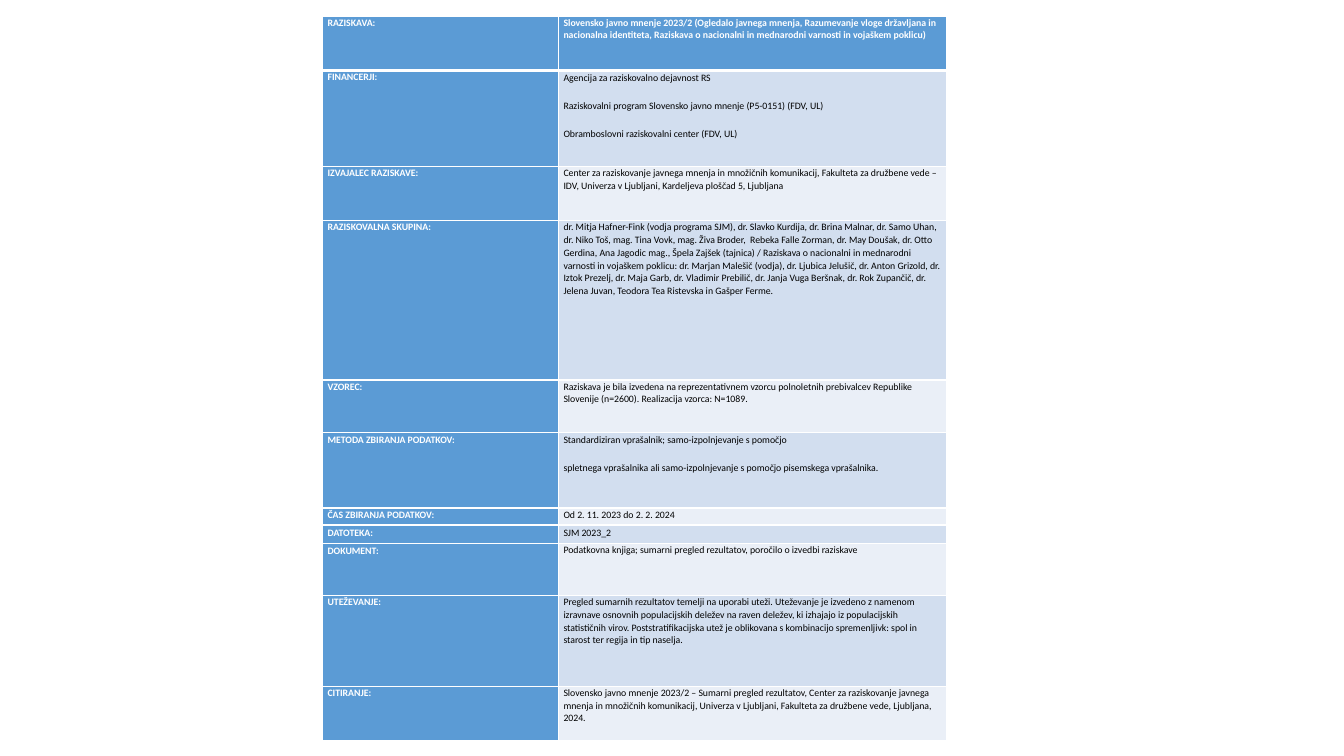
import pptx
import pptx.util
import pptx.dml.color
import pptx.enum.text
import pptx.oxml
import pptx.oxml.ns

WIDE, HIGH = 13.33, 7.5
BLUE, WHITE, BLACK = "5B9BD5", "FFFFFF", "000000"
BANDS = ["EAEFF7", "D2DEEF"]
TIGHT, LOOSE = (1.07, 8), (1.15, 10)
COLS = [2.34, 3.85]

ROWS = [
    (0.54, "RAZISKAVA:", TIGHT, [
        "Slovensko javno mnenje 2023/2 (Ogledalo javnega mnenja, Razumevanje vloge državljana in "
        "nacionalna identiteta, Raziskava o nacionalni in mednarodni varnosti in vojaškem poklicu)"], TIGHT),
    (0.95, "FINANCERJI:", TIGHT, [
        "Agencija za raziskovalno dejavnost RS",
        "Raziskovalni program Slovensko javno mnenje (P5-0151) (FDV, UL)",
        "Obramboslovni raziskovalni center (FDV, UL)"], LOOSE),
    (0.54, "IZVAJALEC RAZISKAVE:", TIGHT, [
        "Center za raziskovanje javnega mnenja in množičnih komunikacij, Fakulteta za družbene vede – "
        "IDV, Univerza v Ljubljani, Kardeljeva ploščad 5, Ljubljana"], TIGHT),
    (1.58, "RAZISKOVALNA SKUPINA:", TIGHT, [
        "dr. Mitja Hafner-Fink (vodja programa SJM), dr. Slavko Kurdija, dr. Brina Malnar, dr. Samo Uhan, "
        "dr. Niko Toš, mag. Tina Vovk, mag. Živa Broder,  Rebeka Falle Zorman, dr. May Doušak, dr. Otto "
        "Gerdina, Ana Jagodic mag., Špela Zajšek (tajnica) / Raziskava o nacionalni in mednarodni "
        "varnosti in vojaškem poklicu: dr. Marjan Malešič (vodja), dr. Ljubica Jelušič, dr. Anton Grizold, "
        "dr. Iztok Prezelj, dr. Maja Garb, dr. Vladimir Prebilič, dr. Janja Vuga Beršnak, "
        "dr. Rok Zupančič, dr. Jelena Juvan, Teodora Tea Ristevska in Gašper Ferme."], TIGHT),
    (0.52, "VZOREC:", TIGHT, [
        "Raziskava je bila izvedena na reprezentativnem vzorcu polnoletnih prebivalcev Republike "
        "Slovenije (n=2600). Realizacija vzorca: N=1089."], TIGHT),
    (0.75, "METODA ZBIRANJA PODATKOV:", LOOSE, [
        "Standardiziran vprašalnik; samo-izpolnjevanje s pomočjo",
        "spletnega vprašalnika ali samo-izpolnjevanje s pomočjo pisemskega vprašalnika."], LOOSE),
    (0.17, "ČAS ZBIRANJA PODATKOV:", TIGHT, ["Od 2. 11. 2023 do 2. 2. 2024"], TIGHT),
    (0.18, "DATOTEKA:", LOOSE, ["SJM 2023_2"], LOOSE),
    (0.52, "DOKUMENT:", LOOSE, [
        "Podatkovna knjiga; sumarni pregled rezultatov, poročilo o izvedbi raziskave"], TIGHT),
    (0.9, "UTEŽEVANJE:", TIGHT, [
        "Pregled sumarnih rezultatov temelji na uporabi uteži. Uteževanje je izvedeno z namenom "
        "izravnave osnovnih populacijskih deležev na raven deležev, ki izhajajo iz populacijskih "
        "statističnih virov. Poststratifikacijska utež je oblikovana s kombinacijo spremenljivk: spol in "
        "starost ter regija in tip naselja."], TIGHT),
    (0.54, "CITIRANJE:", TIGHT, [
        "Slovensko javno mnenje 2023/2 – Sumarni pregled rezultatov, Center za raziskovanje javnega "
        "mnenja in množičnih komunikacij, Univerza v Ljubljani, Fakulteta za družbene vede, Ljubljana, "
        "2024."], TIGHT),
]


def inch(size):
    return pptx.util.Inches(size)


def color(code):
    return pptx.dml.color.RGBColor.from_string(code)


def edge(cell, top, base):
    props = cell._tc.get_or_add_tcPr()
    for spot, (side, width) in enumerate([("L", 1), ("R", 1), ("T", top), ("B", base)]):
        props.insert(spot, pptx.oxml.parse_xml(
            f'<a:ln{side} {pptx.oxml.ns.nsdecls("a")} w="{pptx.util.Pt(width)}">'
            f'<a:solidFill><a:srgbClr val="{WHITE}"/></a:solidFill></a:ln{side}>'))


def write(cell, lines, gaps, bold):
    cell.margin_left = cell.margin_right = inch(0.05)
    cell.margin_top = cell.margin_bottom = 0
    cell.vertical_anchor = pptx.enum.text.MSO_ANCHOR.TOP
    frame = cell.text_frame
    for spot, line in enumerate(lines):
        para = frame.add_paragraph() if spot else frame.paragraphs[0]
        para.line_spacing = gaps[0]
        para.space_after = pptx.util.Pt(gaps[1])
        run = para.add_run()
        run.text = line
        run.font.name = "Calibri"
        run.font.size = pptx.util.Pt(7)
        run.font.bold = bold
        run.font.color.rgb = color(WHITE if bold else BLACK)


def survey(slide, left, top, width, height):
    frame = slide.shapes.add_table(len(ROWS), len(COLS), *map(inch, (left, top, width, height)))
    table = frame.table
    for col, share in zip(table.columns, COLS):
        col.width = inch(width * share / sum(COLS))
    for spot, (tall, label, near, lines, gaps) in enumerate(ROWS):
        table.rows[spot].height = inch(tall)
        pair = [([label], near, True), (lines, gaps, spot == 0)]
        for cell, (words, space, bold) in zip(table.rows[spot].cells, pair):
            write(cell, words, space, bold)
            cell.fill.solid()
            cell.fill.fore_color.rgb = color(BLUE if bold else BANDS[spot % 2])
            edge(cell, 3 if spot == 1 else 1, 3 if spot == 0 else 1)


def main():
    deck = pptx.Presentation()
    deck.slide_width, deck.slide_height = inch(WIDE), inch(HIGH)
    slide = deck.slides.add_slide(deck.slide_layouts[6])
    survey(slide, 0.24 * WIDE, 0.16, sum(COLS), sum(row[0] for row in ROWS))
    deck.save("out.pptx")


if __name__ == "__main__":
    main()
